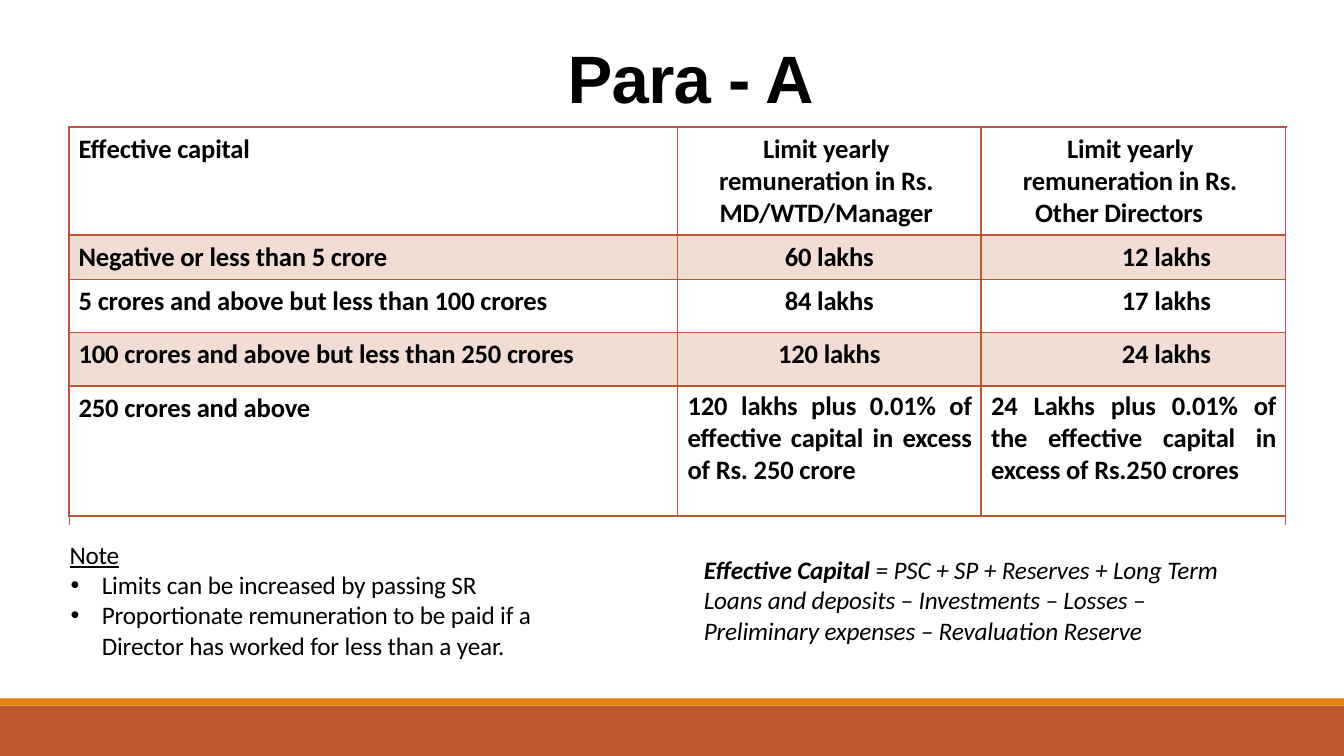
from lxml import etree
from pptx import Presentation
from pptx.dml.color import RGBColor
from pptx.enum.shapes import MSO_CONNECTOR, MSO_SHAPE
from pptx.enum.text import MSO_ANCHOR, PP_ALIGN
from pptx.oxml.ns import qn
from pptx.util import Inches, Pt

RUST = RGBColor(0xBD, 0x58, 0x2C)
ORANGE = RGBColor(0xE4, 0x83, 0x12)
RED = RGBColor(0xC0, 0x50, 0x4D)
BLACK = RGBColor(0, 0, 0)

LEFT, CENTER, RIGHT, JUSTIFY = (
    PP_ALIGN.LEFT, PP_ALIGN.CENTER, PP_ALIGN.RIGHT, PP_ALIGN.JUSTIFY)
TOP, BOTTOM = MSO_ANCHOR.TOP, MSO_ANCHOR.BOTTOM
RECTANGLE, STRAIGHT = MSO_SHAPE.RECTANGLE, MSO_CONNECTOR.STRAIGHT

HEADER_LIMIT = "Limit yearly remuneration in Rs."
LIMITS = [
    ["Effective capital", HEADER_LIMIT + " MD/WTD/Manager", HEADER_LIMIT + "\nOther Directors"],
    ["Negative or less than 5 crore", "60 lakhs", "12 lakhs"],
    ["5 crores and above but less than 100 crores", "84 lakhs", "17 lakhs"],
    ["100 crores and above but less than 250 crores", "120 lakhs", "24 lakhs"],
    ["250 crores and above",
     "120 lakhs plus 0.01% of effective capital in excess of Rs. 250 crore",
     "24 Lakhs plus 0.01% of the effective capital in excess of Rs.250 crores"],
]
COLUMN_WIDTHS = [6.04, 3.01, 3.02]
ROW_HEIGHTS = [1.07, 0.44, 0.53, 0.53, 1.29]
LAST_ROW = len(LIMITS) - 1


class SlideBuilder:
    def __init__(self, slide):
        self.slide = slide
        self.font = "Calibri"
        self.color = BLACK

    def add_runs(self, paragraph, runs, size, font=None, spacing=-10):
        """Add (text, font values) runs; spacing is in hundredths of a point."""
        for text, values in runs:
            run = paragraph.add_run()
            run.text = text
            base = {"name": font or self.font, "size": Pt(size)}
            for name, value in (base | values).items():
                setattr(run.font, name, value)
            run.font.color.rgb = self.color
            run._r.get_or_add_rPr().set("spc", str(spacing))

    def layout(self, paragraph, align=LEFT, before=0, margin=0, indent=0, bullet=None):
        paragraph.alignment = align
        paragraph.space_before = Pt(before)
        properties = paragraph._p.get_or_add_pPr()
        properties.set("marL", str(Inches(margin)))
        properties.set("indent", str(Inches(indent)))
        if bullet:
            etree.SubElement(properties, qn("a:buFont"), typeface="Arial")
            etree.SubElement(properties, qn("a:buChar"), char=bullet)

    def frame(self, shape, anchor=TOP, top_margin=0.01):
        values = {"word_wrap": True, "vertical_anchor": anchor, "margin_left": 0,
                  "margin_right": 0, "margin_bottom": 0, "margin_top": Inches(top_margin)}
        for name, value in values.items():
            setattr(shape.text_frame, name, value)
        return shape.text_frame

    def title(self, text, left, top, width, height):
        heading = self.slide.shapes.title
        heading.left, heading.top = Inches(left), Inches(top)
        heading.width, heading.height = Inches(width), Inches(height)
        paragraph = self.frame(heading, BOTTOM, 0.02).paragraphs[0]
        self.layout(paragraph, CENTER, before=1.3, margin=0.02)
        self.add_runs(paragraph, [(text, {"bold": True})], 47.9, "Arial", -50)

    def bar(self, top, height, color):
        band = self.slide.shapes.add_shape(
            RECTANGLE, 0, Inches(top), Inches(13.33), Inches(height))
        band.shadow.inherit = False
        band.fill.solid()
        band.fill.fore_color.rgb = color
        band.line.fill.background()

    def rule(self, x1, y1, x2, y2):
        edge = self.slide.shapes.add_connector(
            STRAIGHT, Inches(x1), Inches(y1), Inches(x2), Inches(y2))
        edge.line.color.rgb = RED
        edge.line.width = Pt(1)
        etree.SubElement(edge._element.spPr, qn("a:effectLst"))

    def text(self, left, top, width, height, paragraphs):
        """Add a text box from (runs, paragraph layout) pairs."""
        box = self.slide.shapes.add_textbox(
            Inches(left), Inches(top), Inches(width), Inches(height))
        frame = self.frame(box)
        for i, (runs, options) in enumerate(paragraphs):
            paragraph = frame.add_paragraph() if i else frame.paragraphs[0]
            self.layout(paragraph, **options)
            self.add_runs(paragraph, runs, 18)

    def borders(self, cell, widths):
        properties = cell._tc.get_or_add_tcPr()
        for i, (side, width) in enumerate(widths.items()):
            line = etree.Element(qn("a:ln" + side), w=str(Pt(width)))
            fill = etree.SubElement(line, qn("a:solidFill"))
            etree.SubElement(fill, qn("a:srgbClr"), val=str(RUST))
            properties.insert(i, line)

    def cell(self, cell, text, row, column):
        limit = column > 0
        long_limit = limit and row == LAST_ROW
        header_limit = limit and row == 0
        if long_limit:
            align, margin, right = JUSTIFY, 0.1, 0.09
        elif header_limit:
            align, margin, right = CENTER, 0.22, 0.28
        else:
            align = [LEFT, CENTER, RIGHT][column]
            margin, right = (0, 0.74 * (column - 1)) if limit else (0.1, 0)
        values = {"margin_left": 0, "margin_right": Inches(right), "margin_bottom": 0,
                  "margin_top": Inches(0.04 if long_limit else 0.06), "vertical_anchor": TOP}
        for name, value in values.items():
            setattr(cell, name, value)
        for i, line in enumerate(text.split("\n")):
            paragraph = cell.text_frame.add_paragraph() if i else cell.text_frame.paragraphs[0]
            self.layout(paragraph, align, before=0 if i else 2.3 if long_limit else 3.2,
                        margin=0 if i else margin)
            self.add_runs(paragraph, [(line, {"bold": True})], 19)
        if row % 2:
            cell.fill.solid()
            cell.fill.fore_color.rgb = RUST
            tint = cell._tc.tcPr.find(".//" + qn("a:srgbClr"))
            etree.SubElement(tint, qn("a:alpha"), val="20000")
        else:
            cell.fill.background()
        self.borders(cell, {"L": 1, "R": 1, "T": 2 if row == 1 else 1, "B": 2 if row == 0 else 1})

    def table(self, left, top, rows, widths, heights):
        table = self.slide.shapes.add_table(
            len(rows), len(widths), Inches(left), Inches(top),
            Inches(sum(widths)), Inches(sum(heights))).table
        table.first_row = table.horz_banding = False
        for column, width in zip(table.columns, widths):
            column.width = Inches(width)
        for r, texts in enumerate(rows):
            table.rows[r].height = Inches(heights[r])
            for c, text in enumerate(texts):
                self.cell(table.cell(r, c), text, r, c)


def main():
    deck = Presentation()
    deck.slide_width, deck.slide_height = Inches(13.33), Inches(7.5)
    builder = SlideBuilder(deck.slides.add_slide(deck.slide_layouts[5]))

    builder.bar(7, 0.5, RUST)
    builder.bar(6.93, 0.07, ORANGE)
    builder.title("Para - A", 3.62, 0.34, 6.44, 0.82)
    builder.table(0.68, 1.26, LIMITS, COLUMN_WIDTHS, ROW_HEIGHTS)
    for side in (0.69, 12.75):
        builder.rule(side, 1.25, side, 5.21)
    builder.rule(0.68, 1.26, 12.76, 1.26)

    bullet = {"margin": 0.33, "indent": -0.31, "bullet": "•"}
    builder.text(0.68, 5.34, 4.67, 1.23, [
        ([("Note", {"underline": True})], {"margin": 0.01, "before": 1}),
        ([("Limits can be increased by passing SR", {})], bullet),
        ([("Proportionate remuneration to be paid if a Director has worked "
           "for less than a year.", {})], bullet),
    ])
    builder.text(6.97, 5.49, 5.21, 0.93, [
        ([("Effective Capital ", {"bold": True, "italic": True}),
          ("= PSC + SP + Reserves + Long Term Loans and deposits – Investments – Losses – "
           "Preliminary expenses – Revaluation Reserve", {"italic": True})],
         {"margin": 0.01, "before": 1}),
    ])
    deck.save("out.pptx")


if __name__ == "__main__":
    main()
